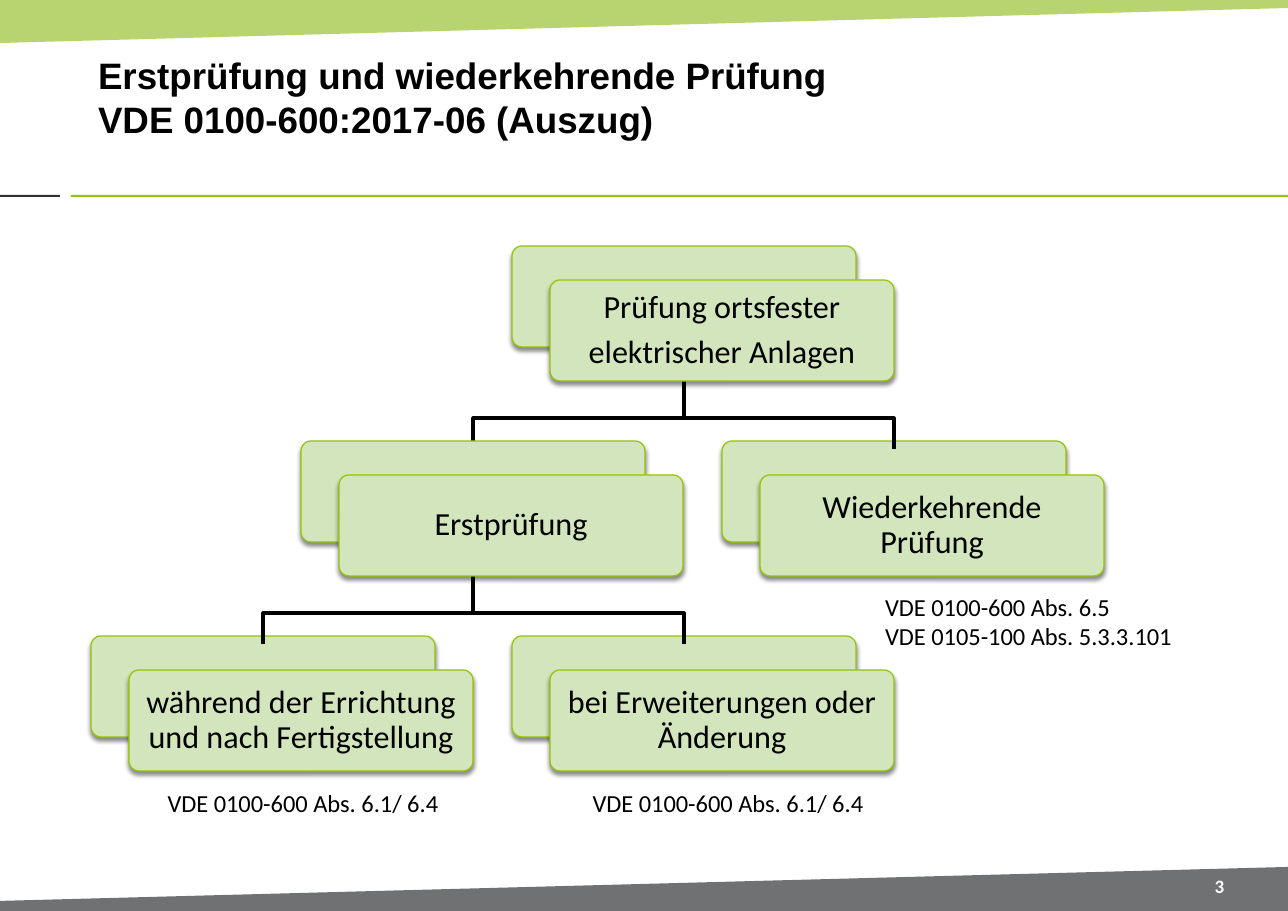
import pptx
import pptx.dml.color
import pptx.enum.shapes
import pptx.enum.text
import pptx.oxml
import pptx.oxml.ns
import pptx.util

SCALE = 914400 / 110.2  # EMU per px
SLIDE_WIDTH, SLIDE_HEIGHT = 1288, 911

TITLE = "Erstprüfung und wiederkehrende Prüfung\vVDE 0100-600:2017-06 (Auszug)"
PAGE_NUMBER = "3"
# name: (column, row, text); neighbours on one row are two columns apart
CARDS = {
    "errichtung": (0, 2, "während der Errichtung und nach Fertigstellung"),
    "erweiterung": (2, 2, "bei Erweiterungen oder Änderung"),
    "wiederkehrend": (3, 1, "Wiederkehrende Prüfung"),
    "anlagen": (2, 0, "Prüfung ortsfester\nelektrischer Anlagen"),
    "erst": (1, 1, "Erstprüfung"),
}
# text, left, top, width, height, centred
CAPTIONS = [
    ("VDE 0100-600 Abs. 6.1/ 6.4", 100, 781, 406, 42, True),
    ("VDE 0100-600 Abs. 6.1/ 6.4", 525, 781, 406, 42, True),
    ("VDE 0100-600 Abs. 6.5\nVDE 0105-100 Abs. 5.3.3.101", 873, 585, 401, 72, False),
]
BANDS = [
    ([(0, 0), (1288, 0), (1288, 8), (0, 43)], "95C02A", 67),
    ([(1288, 911), (0, 911), (0, 901), (1288, 867)], "707173", 100),
]
RULES = [(0, 60, "313130"), (71, 1217, "94C600")]
RULE_TOP, RULE_HEIGHT = 195, 2

CARD_WIDTH, CARD_HEIGHT = 344, 101
FIRST_LEFT, FIRST_TOP = 91, 246
PAIR_STEP, ROW_STEP = 421, 195
FRONT_DX, FRONT_DY = 38, 34
STEM_START, BEND_ABOVE, BRANCH_OVERLAP = 109, 23, 8

ALIGN = pptx.enum.text.PP_ALIGN
SHAPE = pptx.enum.shapes.MSO_SHAPE


def emu(*lengths):
    return [round(length * SCALE) for length in lengths]


def color(hex_string):
    return pptx.dml.color.RGBColor.from_string(hex_string)


def fill_shape(shape, fill):
    shape.shadow.inherit = False
    shape.fill.solid()
    shape.fill.fore_color.rgb = color(fill)
    shape.line.fill.background()


def write(shape, text, size, align, font="Calibri", hue="000000", bold=False,
          inset=(12, 7), middle=True, line_spacing=None, space_after=0):
    frame = shape.text_frame
    frame.text = text
    frame.word_wrap = True
    frame.auto_size = pptx.enum.text.MSO_AUTO_SIZE.NONE
    anchor = pptx.enum.text.MSO_ANCHOR
    frame.vertical_anchor = anchor.MIDDLE if middle else anchor.TOP
    frame.margin_left, frame.margin_top = emu(*inset)
    frame.margin_right, frame.margin_bottom = emu(*inset)
    for para in frame.paragraphs:
        para.alignment = align
        para.line_spacing = line_spacing
        para.space_after = pptx.util.Pt(space_after)
        for span in para.runs:
            span.font.name = font
            span.font.size = pptx.util.Pt(size)
            span.font.bold = bold
            span.font.color.rgb = color(hue)


def add_outline(slide, points, close):
    builder = slide.shapes.build_freeform(*points[0], scale=SCALE)
    builder.add_line_segments(points[1:], close=close)
    return builder.convert_to_shape()


def add_band(slide, points, fill, opacity):
    band = add_outline(slide, points, True)
    fill_shape(band, fill)
    if opacity < 100:
        hue = band.fill._xPr.find(".//" + pptx.oxml.ns.qn("a:srgbClr"))
        hue.append(pptx.oxml.parse_xml(
            f'<a:alpha {pptx.oxml.ns.nsdecls("a")} val="{opacity * 1000}"/>'))


def add_soft_shadow(shape):
    shape.shadow.inherit = False
    effects = shape._element.spPr.find(pptx.oxml.ns.qn("a:effectLst"))
    effects.append(pptx.oxml.parse_xml(
        f'<a:outerShdw {pptx.oxml.ns.nsdecls("a")} blurRad="38100" dist="30000" '
        'dir="5400000" rotWithShape="0"><a:srgbClr val="000000">'
        '<a:alpha val="45000"/></a:srgbClr></a:outerShdw>'))


def card_corner(name):
    column, row, _ = CARDS[name]
    return FIRST_LEFT + column * PAIR_STEP // 2, FIRST_TOP + row * ROW_STEP


def add_card(slide, name):
    """Add a rear panel and, shifted down and right, the labelled front panel."""
    left, top = card_corner(name)
    for dx, dy in [(0, 0), (FRONT_DX, FRONT_DY)]:
        panel = slide.shapes.add_shape(
            SHAPE.ROUNDED_RECTANGLE,
            *emu(left + dx, top + dy, CARD_WIDTH, CARD_HEIGHT))
        panel.adjustments[0] = 0.1
        fill_shape(panel, "D2E5BD")
        panel.line.color.rgb = color("94C600")
        panel.line.width = pptx.util.Pt(0.79)
        add_soft_shadow(panel)
    write(panel, CARDS[name][2], 21, ALIGN.CENTER, inset=(11, 11),
          line_spacing=0.9, space_after=7)


def add_branches(slide, parent, children):
    parent_left, parent_top = card_corner(parent)
    stem = parent_left + CARD_WIDTH // 2
    for child in children:
        child_left, child_top = card_corner(child)
        end, bend = child_left + CARD_WIDTH // 2, child_top - BEND_ABOVE
        branch = add_outline(slide, [
            (stem, parent_top + STEM_START), (stem, bend),
            (end, bend), (end, child_top + BRANCH_OVERLAP)], False)
        branch.shadow.inherit = False
        branch.fill.background()
        branch.line.color.rgb = color("000000")
        branch.line.width = pptx.util.Pt(2)


def main():
    deck = pptx.Presentation()
    deck.slide_width, deck.slide_height = emu(SLIDE_WIDTH, SLIDE_HEIGHT)
    slide = deck.slides.add_slide(deck.slide_layouts[5])

    for points, fill, opacity in BANDS:
        add_band(slide, points, fill, opacity)
    for left, width, fill in RULES:
        rule = slide.shapes.add_shape(
            SHAPE.RECTANGLE, *emu(left, RULE_TOP, width, RULE_HEIGHT))
        fill_shape(rule, fill)

    title = slide.shapes.title
    title.left, title.top, title.width, title.height = emu(86, 31, 1149, 131)
    write(title, TITLE, 24, ALIGN.LEFT, font="Arial", bold=True)
    number = slide.shapes.add_textbox(*emu(1182, 870, 75, 32))
    write(number, PAGE_NUMBER, 12.4, ALIGN.CENTER, hue="FFFFFF", bold=True)

    for name in ["errichtung", "erweiterung", "wiederkehrend"]:
        add_card(slide, name)
    for text, left, top, width, height, centred in CAPTIONS:
        caption = slide.shapes.add_textbox(*emu(left, top, width, height))
        write(caption, text, 16, ALIGN.CENTER if centred else ALIGN.LEFT, middle=False)
    # Each parent card covers the upper end of its own branches
    for parent, children in [("anlagen", ["wiederkehrend", "erst"]),
                             ("erst", ["erweiterung", "errichtung"])]:
        add_branches(slide, parent, children)
        add_card(slide, parent)

    deck.save("out.pptx")


if __name__ == "__main__":
    main()
